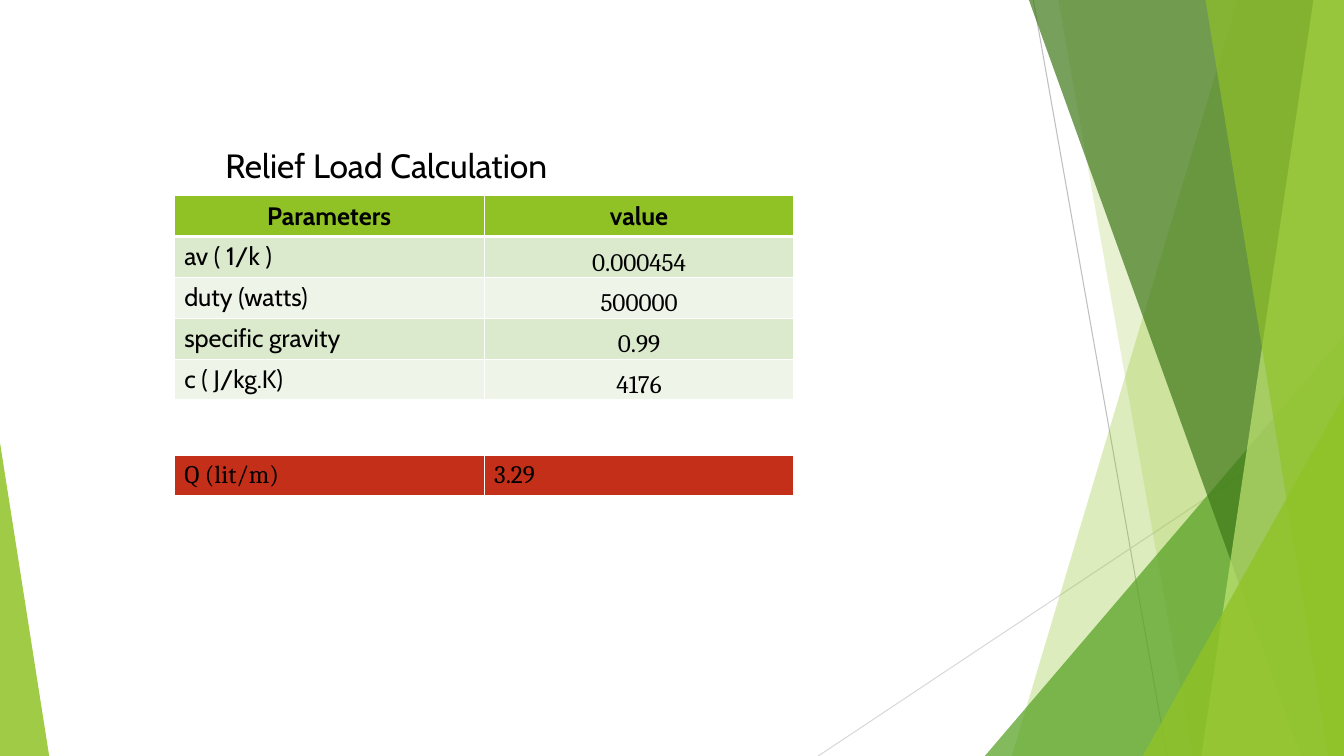
from lxml.etree import SubElement
from pptx import Presentation
from pptx.dml.color import RGBColor
from pptx.enum.shapes import MSO_CONNECTOR, MSO_SHAPE
from pptx.enum.text import MSO_ANCHOR, PP_ALIGN
from pptx.oxml.ns import qn
from pptx.util import Cm, Pt

SLIDE_W, SLIDE_H = 33.87, 19.05
TABLE_LEFT, COLUMN_W, ROW_H = 4.39, 7.81, 1.03
COLORS = {
    "white": "FFFFFF", "black": "000000", "lime": "90C226", "green": "54A021",
    "forest": "3F7819", "pale": "C0E474", "band": "DBE9CD", "light": "EEF4E8",
    "red": "C42F1A", "gray": "BFBFBF", "silver": "D9D9D9",
}
PARAMETERS = [
    ("av ( 1/k )", "0.000454"),
    ("duty (watts)", "500000"),
    ("specific gravity", "0.99"),
    ("c ( J/kg.K)", "4176"),
]


def rgb(name):
    return RGBColor.from_string(COLORS[name])


def paint(shape, color, opacity):
    """Fill a shape with a translucent colour and no outline."""
    shape.shadow.inherit = False
    shape.fill.solid()
    shape.fill.fore_color.rgb = rgb(color)
    shape.line.fill.background()
    tint = shape.fill._xPr.find(f".//{qn('a:srgbClr')}")
    SubElement(tint, qn("a:alpha"), val=str(opacity * 1000))


def add_ray(slide, start, end, color):
    ray = slide.shapes.add_connector(
        MSO_CONNECTOR.STRAIGHT, *(Cm(v) for v in (*start, *end)))
    ray.line.color.rgb = rgb(color)
    ray.line.width = Pt(0.75)
    SubElement(ray._element.spPr, qn("a:effectLst"))


def add_wedge(slide, top_x, bottom_x, color, opacity):
    """Full-height band from a slanted left side to the right slide edge."""
    outline = slide.shapes.build_freeform(Cm(top_x), 0)
    corners = [(SLIDE_W, 0), (SLIDE_W, SLIDE_H), (bottom_x, SLIDE_H)]
    outline.add_line_segments([(Cm(x), Cm(y)) for x, y in corners], close=True)
    paint(outline.convert_to_shape(), color, opacity)


def add_corner(slide, left, top, right, apex, color, opacity):
    """Triangle standing on the bottom slide edge."""
    corner = slide.shapes.add_shape(
        MSO_SHAPE.ISOSCELES_TRIANGLE, Cm(left), Cm(top),
        Cm(right - left), Cm(SLIDE_H - top))
    corner.adjustments[0] = apex
    paint(corner, color, opacity)


def add_title(slide, text):
    title = slide.shapes.add_textbox(Cm(5.43), Cm(3.5), Cm(12), Cm(1.3))
    frame = title.text_frame
    frame.word_wrap = True
    frame.vertical_anchor = MSO_ANCHOR.MIDDLE
    frame.text = text
    style(frame.paragraphs[0], "Cabin", 24)


def style(paragraph, font, size=18, bold=False, align=PP_ALIGN.LEFT):
    paragraph.alignment = align
    paragraph.font.name = font
    paragraph.font.size = Pt(size)
    paragraph.font.bold = bold
    paragraph.font.color.rgb = rgb("black")


def add_grid(slide, top, row_count):
    frame = slide.shapes.add_table(
        row_count, 2, Cm(TABLE_LEFT), Cm(top),
        Cm(2 * COLUMN_W), Cm(row_count * ROW_H))
    return frame.table


def fill_cell(cell, text, fill, font, bottom_line=1, **text_style):
    cell.text = text
    style(cell.text_frame.paragraphs[0], font, **text_style)
    properties = cell._tc.get_or_add_tcPr()
    for side, width in (("L", 1), ("R", 1), ("T", 1), ("B", bottom_line)):
        border = SubElement(properties, qn(f"a:ln{side}"), w=str(Pt(width)))
        solid = SubElement(border, qn("a:solidFill"))
        SubElement(solid, qn("a:srgbClr"), val=COLORS["white"])
    cell.fill.solid()
    cell.fill.fore_color.rgb = rgb(fill)


def add_parameter_table(slide):
    grid = add_grid(slide, 4.93, len(PARAMETERS) + 1)
    for column, heading in enumerate(("Parameters", "value")):
        fill_cell(grid.cell(0, column), heading, "lime", "Cabin",
                  bottom_line=3, bold=True, align=PP_ALIGN.CENTER)
    for row, (parameter, value) in enumerate(PARAMETERS, start=1):
        fill = "band" if row % 2 else "light"
        fill_cell(grid.cell(row, 0), parameter, fill, "Cabin")
        value_cell = grid.cell(row, 1)
        value_cell.vertical_anchor = MSO_ANCHOR.BOTTOM
        value_cell.margin_left = value_cell.margin_right = Cm(0.02)
        value_cell.margin_top, value_cell.margin_bottom = Cm(0.02), 0
        fill_cell(value_cell, value, fill, "Cambria", align=PP_ALIGN.CENTER)


def add_result_table(slide):
    grid = add_grid(slide, 11.48, 1)
    for column, text in enumerate(("Q (lit/m)", "3.29")):
        fill_cell(grid.cell(0, column), text, "red", "Cambria", bottom_line=3)


def add_backdrop(slide):
    add_ray(slide, (26.04, 0), (29.41, SLIDE_H), "gray")
    add_ray(slide, (SLIDE_W, 10.24), (20.62, SLIDE_H), "silver")
    add_wedge(slide, 31.19, 25.5, "lime", 30)
    add_wedge(slide, 26.67, 30.05, "lime", 20)
    add_corner(slide, 24.82, 8.46, SLIDE_W, 1, "green", 72)
    add_wedge(slide, 25.93, 32.79, "forest", 70)
    add_wedge(slide, 33.1, 30.28, "pale", 70)
    add_wedge(slide, 30.38, 33.48, "lime", 65)
    add_corner(slide, 28.8, 9.98, SLIDE_W, 1, "lime", 80)
    add_corner(slide, 0, 11.15, 1.24, 0, "lime", 85)


def main():
    deck = Presentation()
    deck.slide_width, deck.slide_height = Cm(SLIDE_W), Cm(SLIDE_H)
    slide = deck.slides.add_slide(deck.slide_layouts[6])
    add_backdrop(slide)
    add_title(slide, "Relief Load Calculation")
    add_parameter_table(slide)
    add_result_table(slide)
    deck.save("out.pptx")


if __name__ == "__main__":
    main()
